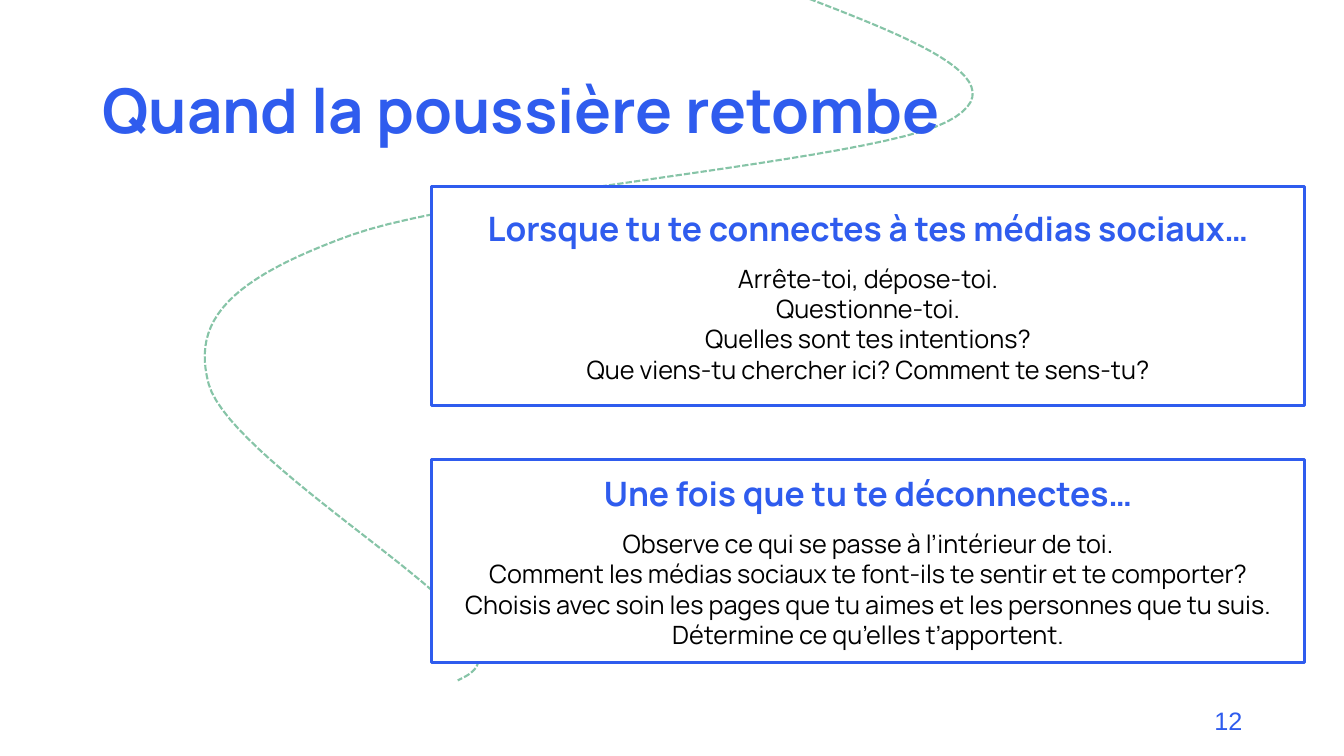
from dataclasses import dataclass

from pptx import Presentation
from pptx.dml.color import RGBColor
from pptx.enum.dml import MSO_LINE
from pptx.enum.shapes import MSO_SHAPE
from pptx.enum.text import MSO_ANCHOR as Anchor, PP_ALIGN as Align
from pptx.util import Inches, Pt


@dataclass(frozen=True)
class Theme:
    blue: RGBColor = RGBColor(0x2F, 0x5C, 0xEE)
    green: RGBColor = RGBColor(0x86, 0xC4, 0xA7)
    black: RGBColor = RGBColor(0, 0, 0)
    white: RGBColor = RGBColor(0xFF, 0xFF, 0xFF)
    font: str = "Manrope"
    number_font: str = "Arial"
    title_size: Pt = Pt(44)
    heading_size: Pt = Pt(24)
    body_size: Pt = Pt(18)
    heading_gap: Pt = Pt(11)


THEME = Theme()
CARD_LEFT, CARD_WIDTH = 4.28, 8.66
CURVE_START = (8.03, -0.01)
CURVE = [
    ((9.09, 0.4), (10.15, 0.82), (9.39, 1.21)),
    ((8.63, 1.6), (4.71, 1.9), (3.49, 2.33)),
    ((2.27, 2.77), (1.9, 3.18), (2.07, 3.81)),
    ((2.24, 4.43), (4.09, 5.58), (4.5, 6.07)),
    ((4.91, 6.56), (4.73, 6.66), (4.54, 6.75)),
]
CARDS = [
    (1.85, 2.17, "Lorsque tu te connectes à tes médias sociaux…", [
        "Arrête-toi, dépose-toi.",
        "Questionne-toi.",
        "Quelles sont tes intentions?",
        "Que viens-tu chercher ici? Comment te sens-tu?",
    ]),
    (4.56, 2.01, "Une fois que tu te déconnectes…", [
        "Observe ce qui se passe à l’intérieur de toi.",
        "Comment les médias sociaux te font-ils te sentir et te comporter?",
        "Choisis avec soin les pages que tu aimes et les personnes que tu suis.",
        "Détermine ce qu’elles t’apportent.",
    ]),
]


def write(p, text, size, color, bold=False, align=Align.LEFT, font=THEME.font):
    p.text = text
    p.alignment = align
    f = p.runs[0].font
    f.name, f.size, f.bold = font, size, bold
    f.color.rgb = color


def bezier_points(start, segments, steps=24):
    points = []
    for c1, c2, end in segments:
        for i in range(1, steps + 1):
            t = i / steps
            u = 1 - t
            weights = (u ** 3, 3 * u * u * t, 3 * u * t * t, t ** 3)
            corners = (start, c1, c2, end)
            points.append(tuple(
                Inches(sum(w * c[axis] for w, c in zip(weights, corners)))
                for axis in (0, 1)))
        start = end
    return points


def add_curve(slide, start, segments):
    builder = slide.shapes.build_freeform(*map(Inches, start))
    builder.add_line_segments(bezier_points(start, segments), close=False)
    sp = builder.convert_to_shape()
    sp.shadow.inherit = False
    sp.fill.background()
    sp.line.color.rgb = THEME.green
    sp.line.width = Pt(1.5)
    sp.line.dash_style = MSO_LINE.SQUARE_DOT


def add_text(slide, box, text, size, **style):
    tf = slide.shapes.add_textbox(*map(Inches, box)).text_frame
    tf.word_wrap = True
    tf.vertical_anchor = Anchor.MIDDLE
    p = tf.paragraphs[0]
    write(p, text, size, THEME.blue, **style)
    return p


def add_card(slide, top, height, heading, lines):
    box = map(Inches, (CARD_LEFT, top, CARD_WIDTH, height))
    sp = slide.shapes.add_shape(MSO_SHAPE.RECTANGLE, *box)
    sp.shadow.inherit = False
    sp.fill.solid()
    sp.fill.fore_color.rgb = THEME.white
    sp.line.color.rgb = THEME.blue
    sp.line.width = Pt(2.25)
    tf = sp.text_frame
    tf.word_wrap = True
    tf.vertical_anchor = Anchor.MIDDLE
    p = tf.paragraphs[0]
    write(p, heading, THEME.heading_size, THEME.blue, True, Align.CENTER)
    p.space_after = THEME.heading_gap
    for line in lines:
        write(tf.add_paragraph(), line, THEME.body_size, THEME.black,
              align=Align.CENTER)


def main():
    prs = Presentation()
    prs.slide_width, prs.slide_height = Inches(13.33), Inches(7.5)
    slide = prs.slides.add_slide(prs.slide_layouts[6])
    add_curve(slide, CURVE_START, CURVE)
    add_text(slide, (9.42, 6.95, 3, 0.4), "12", THEME.body_size,
             align=Align.RIGHT, font=THEME.number_font)
    title = add_text(slide, (0.92, 0.4, 11.5, 1.45),
                     "Quand la poussière retombe", THEME.title_size, bold=True)
    title.line_spacing = 0.9
    for card in CARDS:
        add_card(slide, *card)
    prs.save("out.pptx")


if __name__ == "__main__":
    main()
